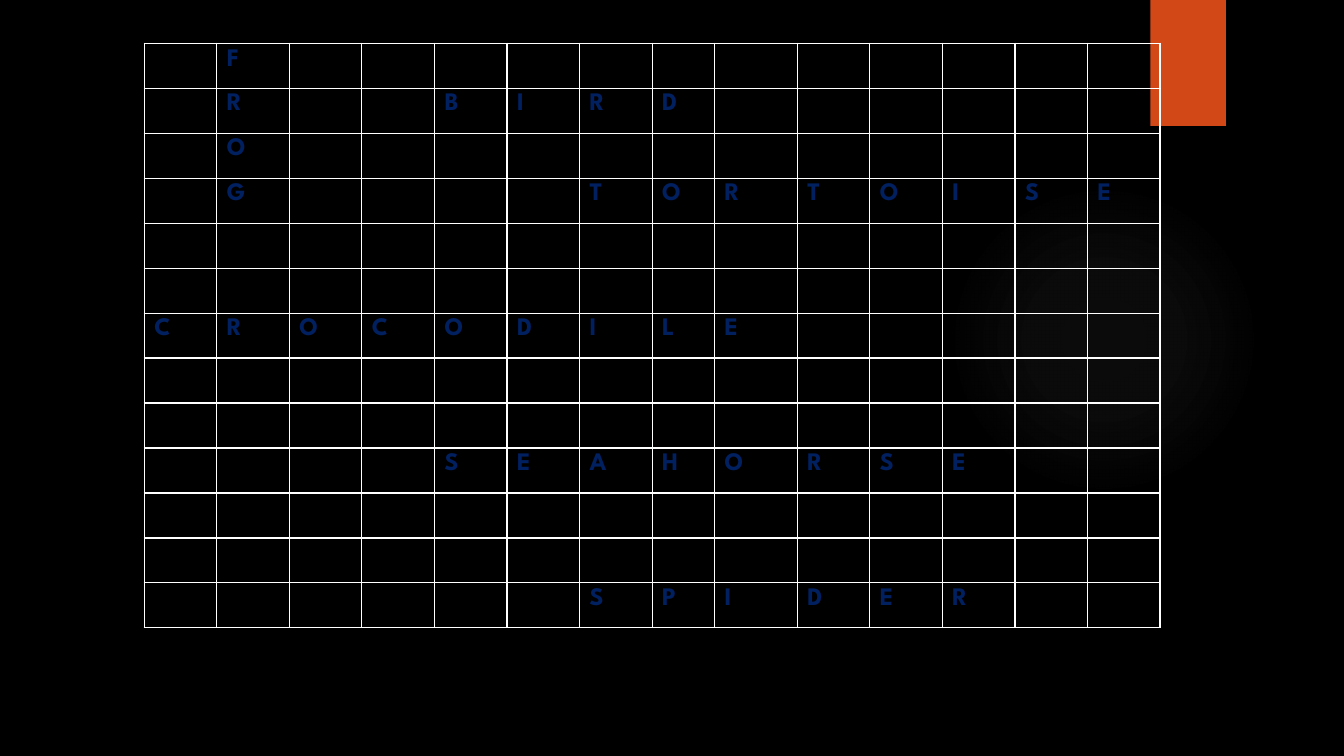
from pptx import Presentation
from pptx import util as u
from pptx.dml.color import RGBColor
from pptx.enum import shapes
from pptx.oxml import parse_xml
from pptx.oxml.ns import nsdecls, qn

WORDS = [
    ("FROG", 0, 1, "down"),
    ("BIRD", 1, 4, "across"),
    ("TORTOISE", 3, 6, "across"),
    ("CROCODILE", 6, 0, "across"),
    ("SEAHORSE", 9, 4, "across"),
    ("SPIDER", 12, 6, "across"),
]
ROWS, COLS = 13, 14
GRID = (1.43, 0.43, 10.05, 5.8)
WIDE, ODD = 0.72, {7: 0.62, 8: 0.82}
GLOW = (9.41, 1.83, 3.08, 3.08)
BAR = (11.41, 0, 0.75, 1.25)
STOPS = [(0, 7), (36, 6), (69, 0)]
THEME = {
    "back": "000000", "bar": "D34817", "glow": "A6A1A1", "line": "FFFFFF",
    "ink": "002060", "font": "League Spartan", "size": 18, "rule": 1,
}


def color(name):
    return RGBColor.from_string(THEME[name])


def box(slide, kind, place):
    shape = slide.shapes.add_shape(kind, *map(u.Inches, place))
    shape.shadow.inherit = False
    shape.line.fill.background()
    return shape


def add_glow(slide):
    shape = box(slide, shapes.MSO_SHAPE.OVAL, GLOW)
    shape.fill.gradient()
    stops = "".join(
        f'<a:gs pos="{pos * 1000}"><a:srgbClr val="{THEME["glow"]}">'
        f'<a:alpha val="{alpha * 1000}"/></a:srgbClr></a:gs>'
        for pos, alpha in STOPS)
    fade = parse_xml(
        f'<a:gradFill {nsdecls("a")} rotWithShape="1"><a:gsLst>{stops}</a:gsLst>'
        '<a:path path="circle"><a:fillToRect l="50000" t="50000" r="50000" '
        'b="50000"/></a:path></a:gradFill>')
    props = shape._element.spPr
    props.replace(props.find(qn("a:gradFill")), fade)


def add_bar(slide):
    shape = box(slide, shapes.MSO_SHAPE.RECTANGLE, BAR)
    shape.fill.solid()
    shape.fill.fore_color.rgb = color("bar")
    shape._element.spPr.find(qn("a:effectLst")).append(parse_xml(
        f'<a:outerShdw {nsdecls("a")} blurRad="{u.Pt(3)}" dist="{u.Pt(2)}" '
        'dir="5400000" rotWithShape="0"><a:srgbClr val="000000">'
        '<a:alpha val="45000"/></a:srgbClr></a:outerShdw>'))


def frame(cell):
    cell.fill.background()
    props = cell._tc.get_or_add_tcPr()
    for spot, side in enumerate("LRTB"):
        props.insert(spot, parse_xml(
            f'<a:ln{side} {nsdecls("a")} w="{u.Pt(THEME["rule"])}">'
            f'<a:solidFill><a:srgbClr val="{THEME["line"]}"/></a:solidFill>'
            f'</a:ln{side}>'))


def write(cell, letter):
    run = cell.text_frame.paragraphs[0].add_run()
    run.text = letter
    run.font.name = THEME["font"]
    run.font.size = u.Pt(THEME["size"])
    run.font.bold = True
    run.font.color.rgb = color("ink")


def add_grid(slide):
    table = slide.shapes.add_table(ROWS, COLS, *map(u.Inches, GRID)).table
    table.first_row = table.horz_banding = False
    for spot, col in enumerate(table.columns):
        col.width = u.Inches(ODD.get(spot, WIDE))
    for row in table.rows:
        row.height = u.Inches(GRID[3] / ROWS)
    for cell in table.iter_cells():
        frame(cell)
    for word, row, col, way in WORDS:
        for step, letter in enumerate(word):
            down, right = (step, 0) if way == "down" else (0, step)
            write(table.cell(row + down, col + right), letter)


def main():
    deck = Presentation()
    deck.slide_width, deck.slide_height = u.Inches(13.33), u.Inches(7.5)
    slide = deck.slides.add_slide(deck.slide_layouts[6])
    slide.background.fill.solid()
    slide.background.fill.fore_color.rgb = color("back")
    add_glow(slide)
    add_bar(slide)
    add_grid(slide)
    deck.save("out.pptx")


if __name__ == "__main__":
    main()
